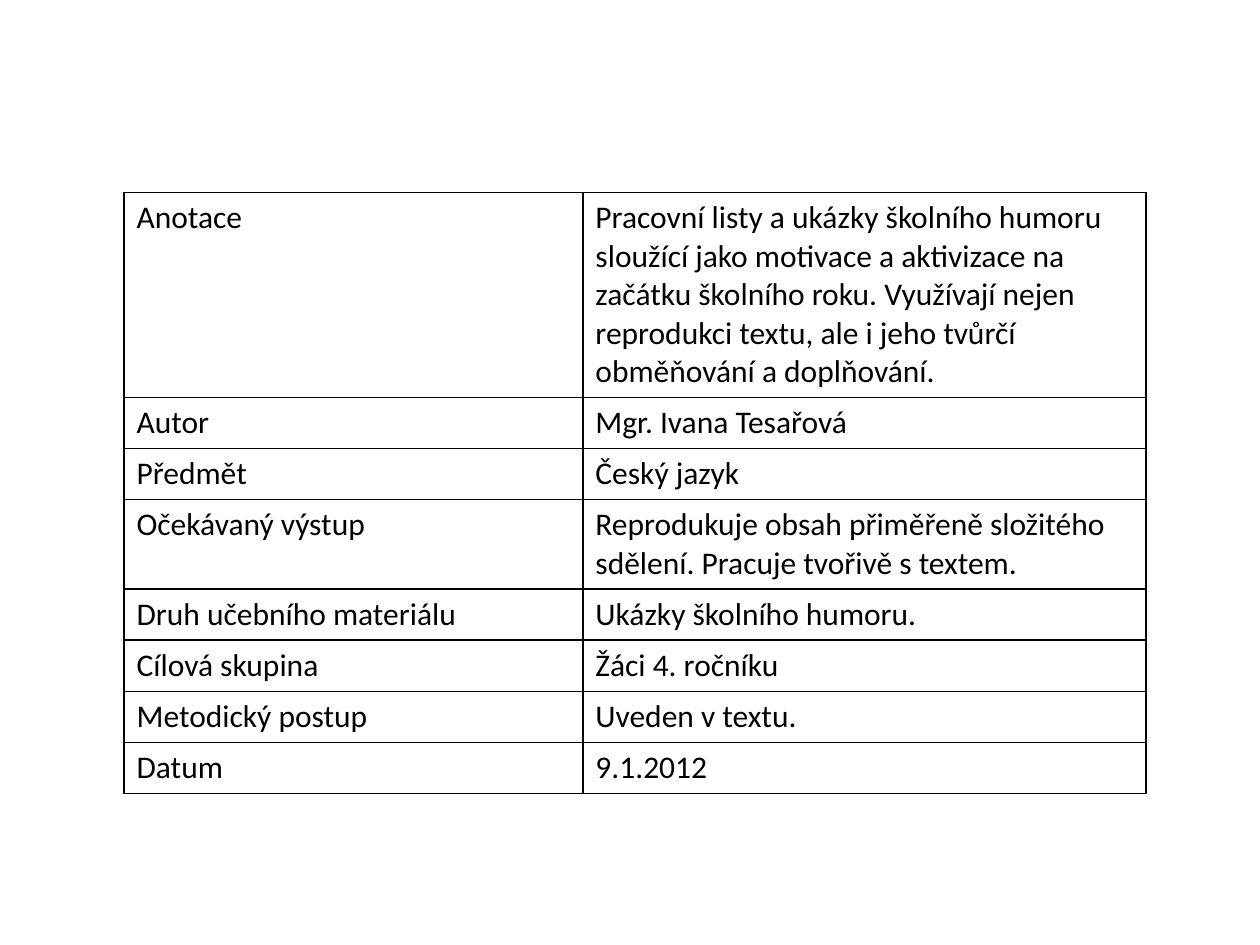
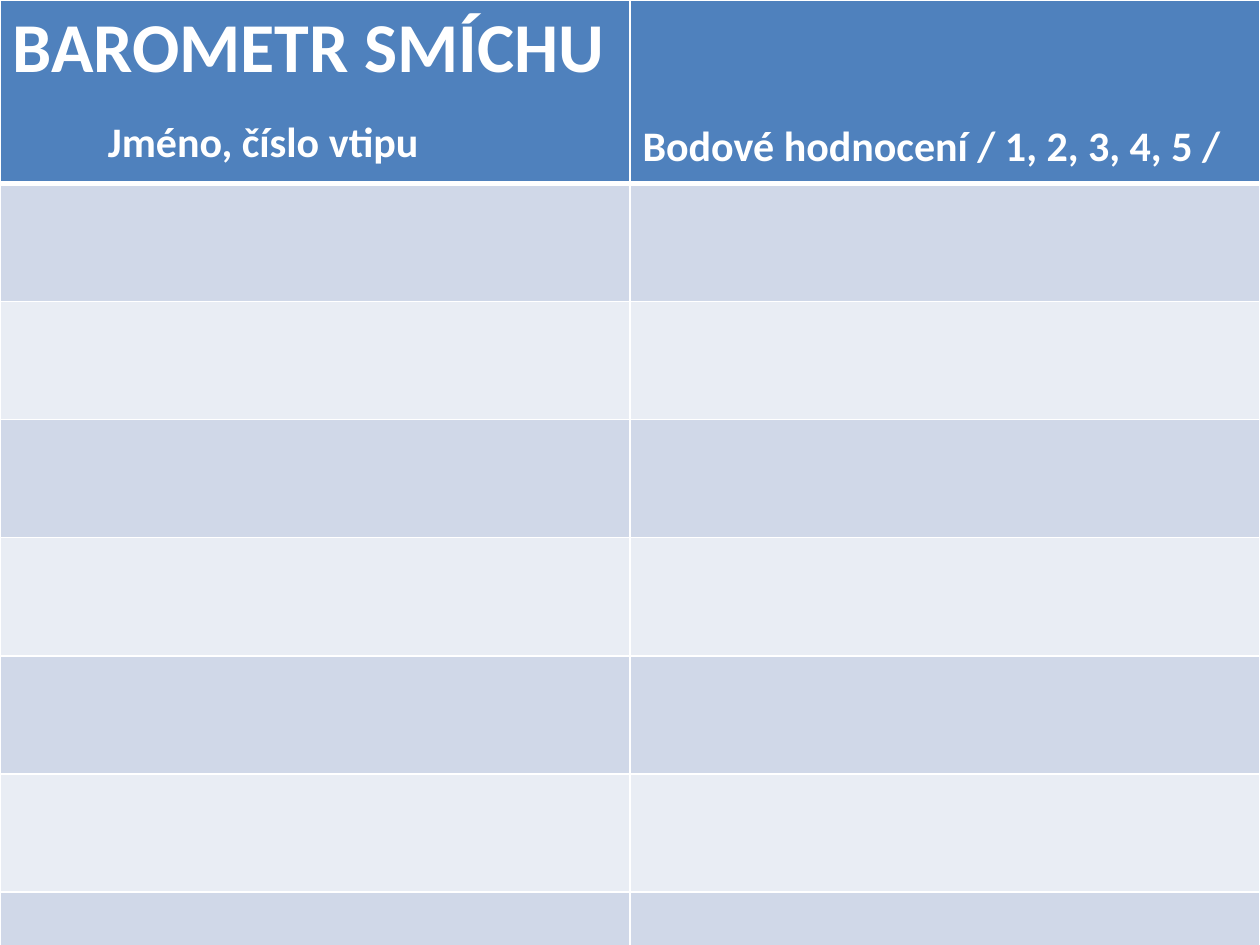
from pptx import Presentation
from pptx.dml.color import RGBColor
from pptx.enum.text import MSO_ANCHOR as Anchor
from pptx.oxml.ns import qn
from pptx.util import Cm, Pt
from lxml.etree import SubElement

BLACK = RGBColor(0x00, 0x00, 0x00)
WHITE = RGBColor(0xFF, 0xFF, 0xFF)
HEADER_BLUE = RGBColor(0x4F, 0x81, 0xBD)
BAND_DARK = RGBColor(0xD0, 0xD8, 0xE8)
BAND_LIGHT = RGBColor(0xE9, 0xED, 0xF4)
FONT = "Calibri"


def set_borders(cell, color, bottom=1):
    properties = cell._tc.get_or_add_tcPr()
    for side, width in (("lnL", 1), ("lnR", 1), ("lnT", 1), ("lnB", bottom)):
        line = SubElement(properties, qn("a:" + side), w=str(Pt(width)))
        fill = SubElement(line, qn("a:solidFill"))
        SubElement(fill, qn("a:srgbClr"), val=str(color))


def add_span(para, text, size, color, bold=False):
    span = para.add_run()
    span.text = text
    span.font.name = FONT
    span.font.size = Pt(size)
    span.font.bold = bold
    span.font.color.rgb = color


deck = Presentation()
deck.slide_width = Cm(25.4)
deck.slide_height = Cm(19.05)
blank = deck.slide_layouts[6]

details = [
    ("Anotace", [
        "Pracovní listy a ukázky školního humoru",
        "sloužící jako motivace a aktivizace na začátku školního roku. "
        "Využívají nejen reprodukci textu, ale i jeho tvůrčí obměňování a doplňování.",
    ]),
    ("Autor", ["Mgr. Ivana Tesařová"]),
    ("Předmět", ["Český jazyk"]),
    ("Očekávaný výstup", [
        "Reprodukuje obsah přiměřeně složitého sdělení. Pracuje tvořivě s textem."
    ]),
    ("Druh učebního materiálu", ["Ukázky školního humoru."]),
    ("Cílová skupina", ["Žáci 4. ročníku"]),
    ("Metodický postup", ["Uveden v textu."]),
    ("Datum", ["9.1.2012"]),
]

page = deck.slides.add_slide(blank)
row_height = Cm(1.03)
details_table = page.shapes.add_table(
    len(details), 2, Cm(2.5), Cm(3.88), Cm(20.6), row_height * len(details)
).table
details_table.first_row = False
details_table.horz_banding = False
details_table.columns[0].width = Cm(9.25)
details_table.columns[1].width = Cm(11.35)

for row, (label, lines) in zip(details_table.rows, details):
    row.height = row_height
    for cell, texts in zip(row.cells, ([label], lines)):
        set_borders(cell, BLACK)
        cell.fill.background()
        for index, text in enumerate(texts):
            frame = cell.text_frame
            para = frame.add_paragraph() if index else frame.paragraphs[0]
            add_span(para, text, 18, BLACK)

page = deck.slides.add_slide(blank)
score_rows = 7
header_height = Cm(3.7)
score_height = Cm(2.38)
score_table = page.shapes.add_table(
    score_rows + 1, 2, 0, 0, deck.slide_width, header_height + score_rows * score_height
).table

for number, row in enumerate(score_table.rows):
    if number == 0:
        row.height, color, bottom = header_height, HEADER_BLUE, 3
    else:
        row.height, bottom = score_height, 1
        color = BAND_DARK if number % 2 else BAND_LIGHT
    for cell in row.cells:
        set_borders(cell, WHITE, bottom)
        cell.fill.solid()
        cell.fill.fore_color.rgb = color

name_header, points_header = score_table.rows[0].cells
add_span(name_header.text_frame.paragraphs[0], "BAROMETR SMÍCHU", 40, WHITE, True)
para = name_header.text_frame.add_paragraph()
para.space_before = Pt(15)
para._p.get_or_add_pPr().set("marL", str(Cm(1.92)))
add_span(para, "Jméno, číslo vtipu", 24, WHITE, True)

points_header.vertical_anchor = Anchor.BOTTOM
points_header.margin_bottom = Cm(0.22)
add_span(points_header.text_frame.paragraphs[0],
         "Bodové hodnocení / 1, 2, 3, 4, 5 /", 24, WHITE, True)

deck.save("out.pptx")
